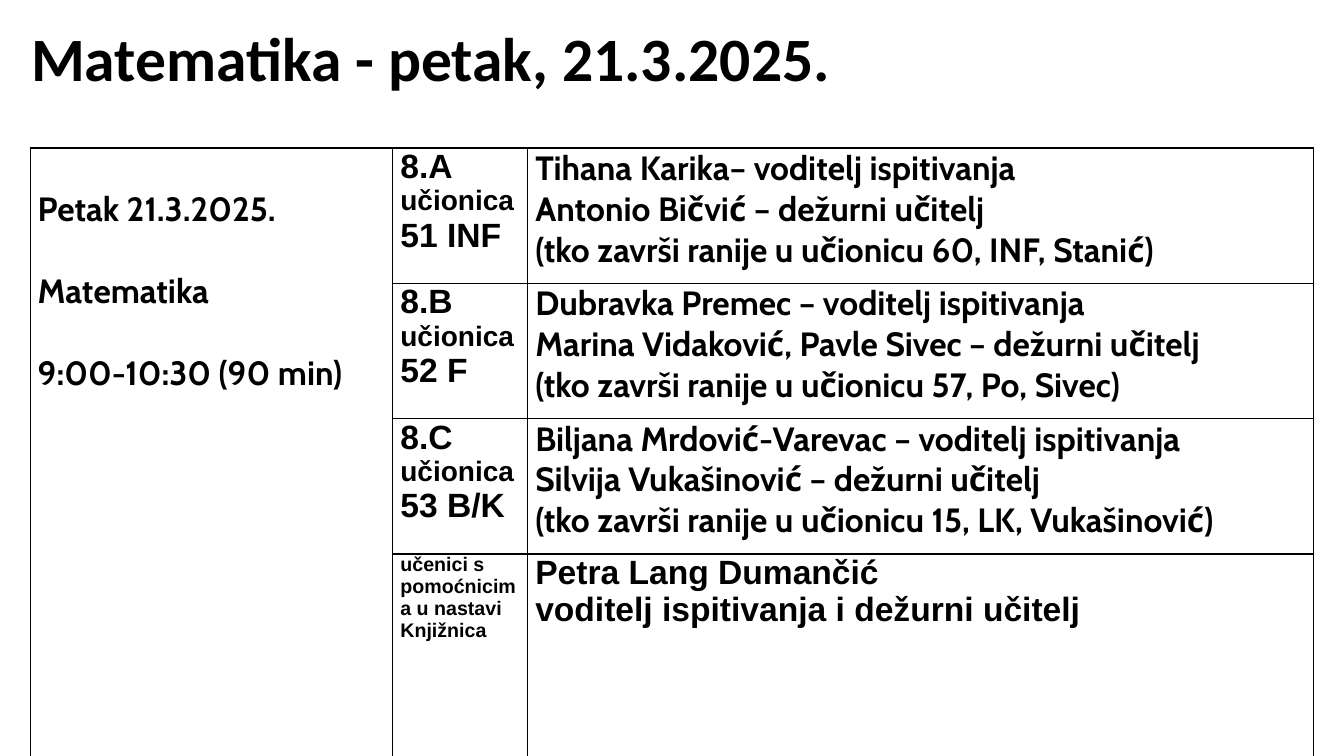
from lxml.etree import SubElement
from pptx import Presentation
from pptx.dml.color import RGBColor
from pptx.enum.text import MSO_ANCHOR, PP_ALIGN
from pptx.oxml.ns import qn
from pptx.util import Cm, Pt

BLACK = RGBColor(0, 0, 0)
COLUMN_WIDTHS = (9.14, 3.4, 19.81)
ROW_HEIGHTS = (3.41, 3.41, 3.41, 5.5)
SCHEDULE = ("Petak 21.3.2025.", "Matematika", "9:00-10:30 (90 min)")
CLASSES = (
    ("8.A", "51 INF",
     ("Tihana Karika– voditelj ispitivanja",
      "Antonio Bičvić – dežurni učitelj",
      "(tko završi ranije u učionicu 60, INF, Stanić)")),
    ("8.B", "52 F",
     ("Dubravka Premec – voditelj ispitivanja",
      "Marina Vidaković, Pavle Sivec – dežurni učitelj",
      "(tko završi ranije u učionicu 57, Po, Sivec)")),
    ("8.C", "53 B/K",
     ("Biljana Mrdović-Varevac – voditelj ispitivanja",
      "Silvija Vukašinović – dežurni učitelj",
      "(tko završi ranije u učionicu 15, LK, Vukašinović)")),
)
ASSISTED_PUPILS = ("učenici s pomoćnicima u nastavi", "Knjižnica")
ASSISTED_STAFF = ("Petra Lang Dumančić", "voditelj ispitivanja i dežurni učitelj")


def write_lines(text_frame, lines, sizes=(24,), font="Arial", gap=0, line_spacing=None):
    """Write one paragraph per line; sizes repeat in turn, gap separates lines."""
    for index, line in enumerate(lines):
        paragraph = text_frame.paragraphs[0] if index == 0 else text_frame.add_paragraph()
        paragraph.alignment = PP_ALIGN.LEFT
        paragraph.space_before = Pt(gap if index else 0)
        if line_spacing:
            paragraph.line_spacing = line_spacing
        run = paragraph.add_run()
        run.text = line
        run.font.name = font
        run.font.size = Pt(sizes[index % len(sizes)])
        run.font.bold = True
        run.font.color.rgb = BLACK


def format_cell(cell):
    cell.margin_left = cell.margin_right = Cm(0.19)
    cell.margin_top = cell.margin_bottom = 0
    cell.vertical_anchor = MSO_ANCHOR.TOP
    properties = cell._tc.get_or_add_tcPr()
    for side in ("a:lnL", "a:lnR", "a:lnT", "a:lnB"):
        border = SubElement(properties, qn(side), w=str(Pt(1)))
        fill = SubElement(border, qn("a:solidFill"))
        SubElement(fill, qn("a:srgbClr"), val=str(BLACK))
    cell.fill.background()


def add_title(slide, left, top, width, height):
    title = slide.shapes.title
    title.left, title.top, title.width, title.height = left, top, width, height
    title.text_frame.vertical_anchor = MSO_ANCHOR.MIDDLE
    write_lines(title.text_frame, ["Matematika - petak, 21.3.2025."],
                sizes=(44,), font="Calibri", line_spacing=0.9)


def add_exam_table(slide, left, top):
    frame = slide.shapes.add_table(len(ROW_HEIGHTS), len(COLUMN_WIDTHS), left, top,
                                   Cm(sum(COLUMN_WIDTHS)), Cm(sum(ROW_HEIGHTS)))
    table = frame.table
    table.first_row = table.horz_banding = False
    for column, width in zip(table.columns, COLUMN_WIDTHS):
        column.width = Cm(width)
    for row, height in zip(table.rows, ROW_HEIGHTS):
        row.height = Cm(height)
    for cell in table.iter_cells():
        format_cell(cell)

    last_row = len(CLASSES)
    schedule = table.cell(0, 0)
    schedule.merge(table.cell(last_row, 0))
    schedule.margin_top = Cm(1.04)
    write_lines(schedule.text_frame, SCHEDULE, font="Cabin", gap=29.3)

    for row, (name, room, staff) in enumerate(CLASSES):
        write_lines(table.cell(row, 1).text_frame, (name, "učionica", room), sizes=(24, 20, 24))
        write_lines(table.cell(row, 2).text_frame, staff, font="Cabin")
    write_lines(table.cell(last_row, 1).text_frame, ASSISTED_PUPILS, sizes=(14,))
    write_lines(table.cell(last_row, 2).text_frame, ASSISTED_STAFF)


def main():
    presentation = Presentation()
    presentation.slide_width, presentation.slide_height = Cm(33.87), Cm(19.05)
    slide = presentation.slides.add_slide(presentation.slide_layouts[5])
    add_title(slide, Cm(0.53), Cm(0.33), Cm(27.76), Cm(2.46))
    add_exam_table(slide, Cm(0.76), Cm(3.73))
    presentation.save("out.pptx")


if __name__ == "__main__":
    main()
